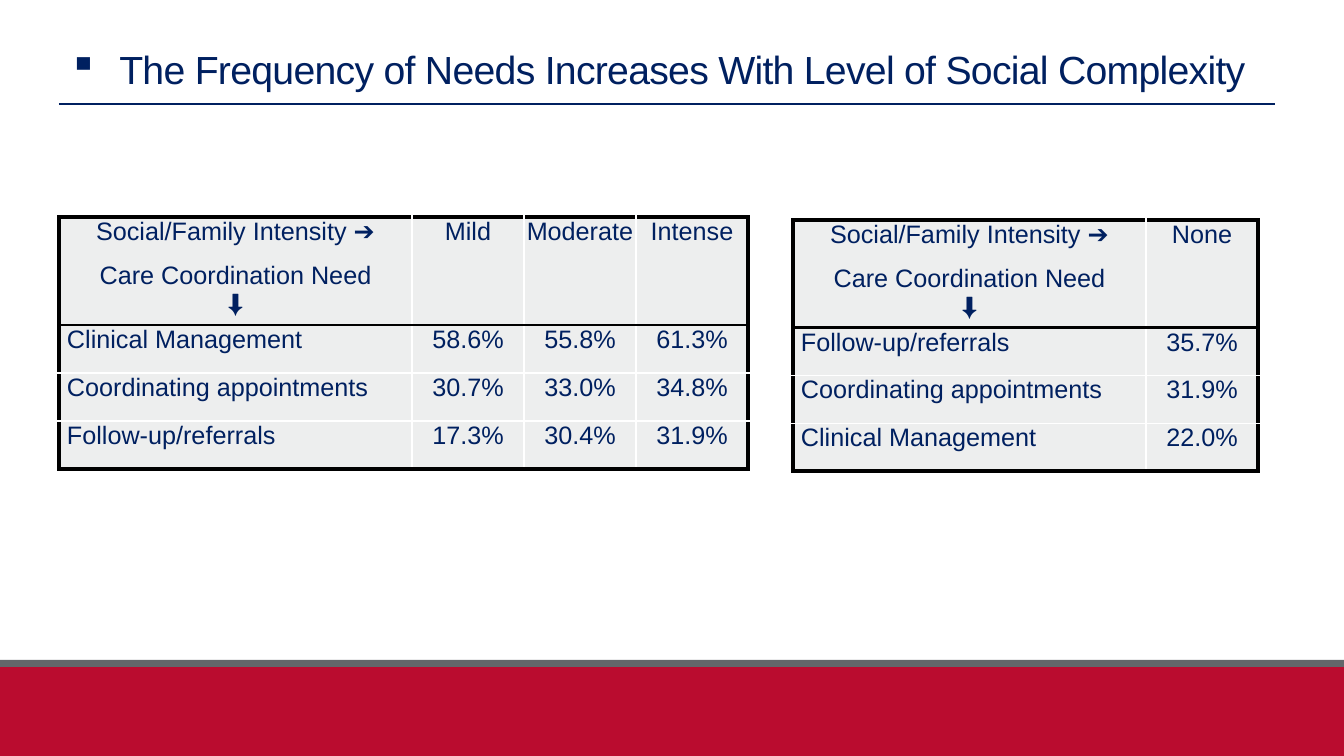
from lxml import etree
from pptx import Presentation
from pptx import util as u
from pptx.dml.color import RGBColor
from pptx.enum import shapes, text
from pptx.oxml.ns import qn

NAVY = RGBColor(0x00, 0x20, 0x60)
RED = RGBColor(0xBA, 0x0C, 0x2F)
GREY = RGBColor(0x63, 0x66, 0x6A)
PALE = RGBColor(0xED, 0xEE, 0xEE)
BLACK = RGBColor(0, 0, 0)
WHITE = RGBColor(0xFF, 0xFF, 0xFF)

HEAD = ["Social/Family Intensity ➔", "Care Coordination Need", "⬇"]
LEVELS = [
    ("Mild", "Moderate", "Intense"),
    ("Clinical Management", "58.6%", "55.8%", "61.3%"),
    ("Coordinating appointments", "30.7%", "33.0%", "34.8%"),
    ("Follow-up/referrals", "17.3%", "30.4%", "31.9%"),
]
NONE = [
    ("None",),
    ("Follow-up/referrals", "35.7%"),
    ("Coordinating appointments", "31.9%"),
    ("Clinical Management", "22.0%"),
]


def px(n):
    return u.Emu(round(n * 914400 / 100.8))


def add_run(par, words, size):
    run = par.add_run()
    run.text = words
    run.font.name = "Arial"
    run.font.size = u.Pt(size)
    run.font.color.rgb = NAVY
    return run


def add_bar(slide, x, y, w, h, color):
    bar = slide.shapes.add_shape(
        shapes.MSO_SHAPE.RECTANGLE, px(x), px(y), px(w), px(h))
    bar.shadow.inherit = False
    bar.fill.solid()
    bar.fill.fore_color.rgb = color
    bar.line.fill.background()


def add_footer(slide, x, y, w, h):
    band = 7
    add_bar(slide, x, y + band, w, h - band, RED)
    add_bar(slide, x, y, w, band, GREY)


def add_title(slide, x, y, w, h, words):
    box = slide.shapes.add_textbox(px(x), px(y), px(w), px(h))
    frame = box.text_frame
    frame.word_wrap = True
    frame.vertical_anchor = text.MSO_ANCHOR.BOTTOM
    par = frame.paragraphs[0]
    # Square bullet with a hanging indent
    props = par._p.get_or_add_pPr()
    props.set("marL", str(u.Inches(0.5)))
    props.set("indent", str(-u.Inches(0.5)))
    etree.SubElement(props, qn("a:buChar")).set("char", "▪")
    run = add_run(par, words, 28)
    run.font._element.set("spc", "-50")
    # Rule under the title
    rule = slide.shapes.add_connector(
        shapes.MSO_CONNECTOR.STRAIGHT, px(x), px(y + h + 7), px(1275), px(y + h + 7))
    rule.line.color.rgb = NAVY
    rule.line.width = u.Pt(1)
    etree.SubElement(rule._element.spPr, qn("a:effectLst"))


def set_edge(cell, side, color, width):
    props = cell._tc.get_or_add_tcPr()
    line = etree.SubElement(props, qn("a:ln" + side), w=str(u.Pt(width)))
    fill = etree.SubElement(line, qn("a:solidFill"))
    etree.SubElement(fill, qn("a:srgbClr"), val=str(color))


def style_cell(cell, row, col, rows, cols):
    thin, rule, frame = (WHITE, 1), (BLACK, 2.25), (BLACK, 3)
    set_edge(cell, "L", *(frame if col == 0 else thin))
    set_edge(cell, "R", *(frame if col == cols - 1 else thin))
    set_edge(cell, "T", *(frame if row == 0 else rule if row == 1 else thin))
    set_edge(cell, "B", *(rule if row == 0 else frame if row == rows - 1 else thin))
    cell.fill.solid()
    cell.fill.fore_color.rgb = PALE
    label = row > 0 and col == 0
    cell.margin_left = px(8 if label else 1)
    cell.margin_right = cell.margin_top = px(1)
    cell.margin_bottom = 0
    return label


def add_needs(slide, x, y, top, data):
    rows, cols = len(data), len(data[1])
    first, rest, high = 353, 112, 48
    shape = slide.shapes.add_table(
        rows, cols, px(x), px(y),
        px(first + rest * (cols - 1)), px(top + high * (rows - 1)))
    table = shape.table
    for i, col in enumerate(table.columns):
        col.width = px(rest if i else first)
    for i, row in enumerate(table.rows):
        row.height = px(high if i else top)
    grid = [(HEAD, *data[0]), *data[1:]]
    for i, row in enumerate(grid):
        for j, entry in enumerate(row):
            cell = table.cell(i, j)
            label = style_cell(cell, i, j, rows, cols)
            frame = cell.text_frame
            lines = entry if isinstance(entry, list) else [entry]
            for k, words in enumerate(lines):
                par = frame.add_paragraph() if k else frame.paragraphs[0]
                par.alignment = text.PP_ALIGN.LEFT if label else text.PP_ALIGN.CENTER
                if k == 1:
                    par.space_before = u.Pt(11)
                add_run(par, words, 18)


def main():
    deck = Presentation()
    deck.slide_width, deck.slide_height = px(1344), px(756)
    slide = deck.slides.add_slide(deck.slide_layouts[6])
    add_footer(slide, 0, 660, 1344, 96)
    add_title(slide, 59, 7, 1285, 90,
              "The Frequency of Needs Increases With Level of Social Complexity")
    add_needs(slide, 59, 217, 108, LEVELS)
    add_needs(slide, 793, 220, 101, NONE)
    deck.save("out.pptx")


if __name__ == "__main__":
    main()
